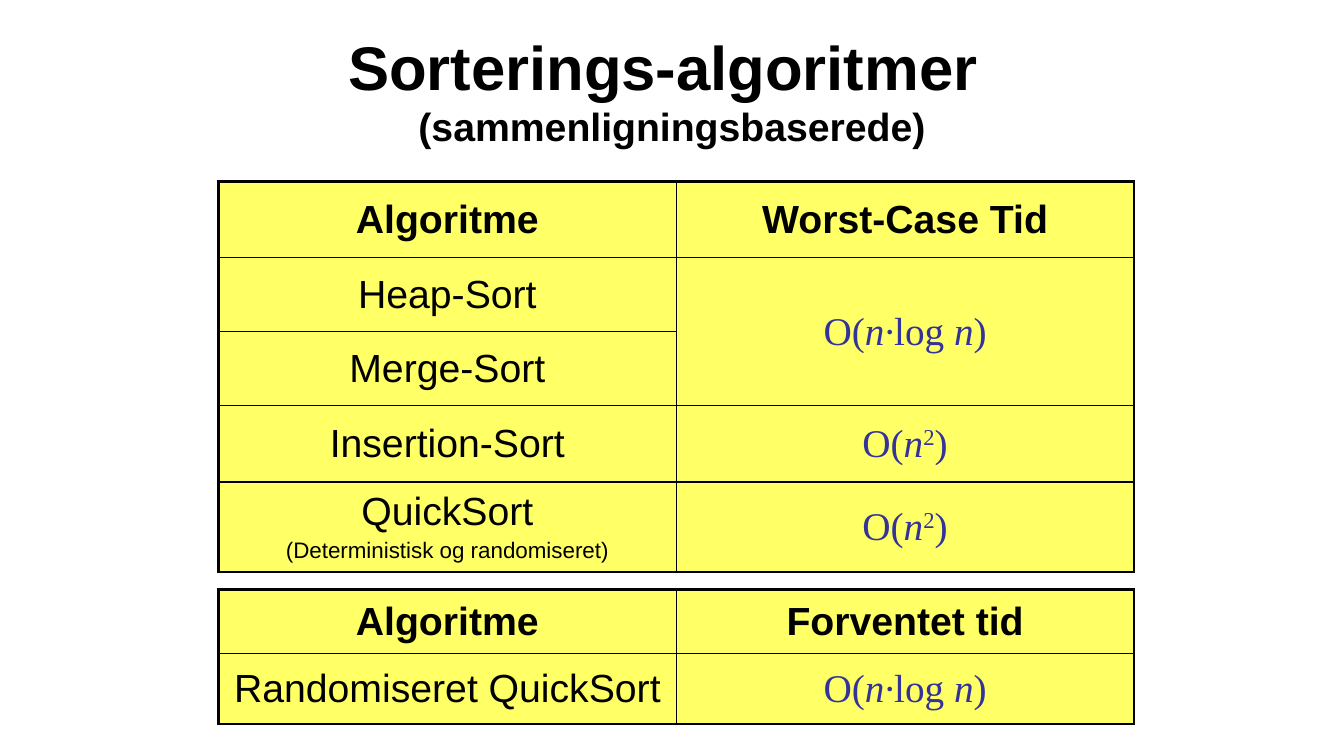
from lxml.etree import SubElement
from pptx import Presentation
from pptx.dml.color import RGBColor
from pptx.enum.text import MSO_ANCHOR as Anchor, PP_ALIGN as Align
from pptx.oxml.ns import qn
from pptx.util import Inches, Pt

BLACK = RGBColor(0x00, 0x00, 0x00)
YELLOW = RGBColor(0xFF, 0xFF, 0x66)
INDIGO = RGBColor(0x33, 0x33, 0x99)

# Grid of the slide: 160 columns by 90 rows
GRID_COLUMNS, GRID_ROWS = 160, 90

# Text formats
BODY = {"name": "Arial", "size": Pt(28), "bold": False, "color": BLACK}
HEAD = {**BODY, "bold": True}
TITLE = {**HEAD, "size": Pt(44)}
NOTE = {**BODY, "size": Pt(16)}
MATH = {**BODY, "name": "Times New Roman", "color": INDIGO}
VARIABLE = {**MATH, "italic": True}
POWER = {**MATH, "baseline": "30000"}

# Running times, each a line of (text, format) spans
LINEARITHMIC = [("O(", MATH), ("n·", VARIABLE), ("log ", MATH), ("n", VARIABLE), (")", MATH)]
QUADRATIC = [("O(", MATH), ("n", VARIABLE), ("2", POWER), (")", MATH)]


class SlideWriter:
    """Holds the deck, the current page and the table style."""

    outer_line, inner_line = Pt(2.25), Pt(1)

    def __init__(self):
        self.deck = Presentation()
        self.deck.slide_width, self.deck.slide_height = Inches(13.33), Inches(7.5)
        self.page = self.deck.slides.add_slide(self.deck.slide_layouts[6])

    def across(self, columns):
        return round(self.deck.slide_width * columns / GRID_COLUMNS)

    def down(self, rows):
        return round(self.deck.slide_height * rows / GRID_ROWS)

    def add_span(self, para, text, formats):
        span = para.add_run()
        span.text = text
        for key, value in formats.items():
            if key == "color":
                span.font.color.rgb = value
            elif key == "baseline":
                span._r.get_or_add_rPr().set(key, value)
            else:
                setattr(span.font, key, value)

    def add_heading(self, left, top, width, height, title, subtitle):
        box = self.page.shapes.add_textbox(
            self.across(left), self.down(top), self.across(width), self.down(height))
        frame = box.text_frame
        frame.word_wrap, frame.vertical_anchor = True, Anchor.MIDDLE
        para = frame.paragraphs[0]
        para.alignment = Align.CENTER
        self.add_span(para, title, TITLE)
        para.add_line_break()
        self.add_span(para, subtitle, HEAD)

    def fill_cell(self, cell, lines):
        cell.vertical_anchor = Anchor.MIDDLE
        for index, spans in enumerate(lines):
            frame = cell.text_frame
            para = frame.add_paragraph() if index else frame.paragraphs[0]
            para.alignment = Align.CENTER
            if index:
                para.space_before = Pt(3.2)
            for text, formats in spans:
                self.add_span(para, text, formats)

    def style_cell(self, cell, outer_sides):
        cell.fill.solid()
        cell.fill.fore_color.rgb = YELLOW
        properties = cell._tc.get_or_add_tcPr()
        for index, side in enumerate("LRTB"):
            width = self.outer_line if outer_sides[side] else self.inner_line
            line = SubElement(properties, qn("a:ln" + side), w=str(int(width)))
            fill = SubElement(line, qn("a:solidFill"))
            SubElement(fill, qn("a:srgbClr"), val=str(BLACK))
            properties.insert(index, line)

    def add_table(self, left, top, column_width, heights, rows):
        """Each row is a list of cells; None joins a cell to the one above."""
        count = len(rows[0])
        table = self.page.shapes.add_table(
            len(rows), count, self.across(left), self.down(top),
            self.across(column_width * count), self.down(sum(heights))).table
        table.first_row = table.horz_banding = False
        for column in table.columns:
            column.width = self.across(column_width)
        for r, (height, row) in enumerate(zip(heights, rows)):
            table.rows[r].height = self.down(height)
            for c, lines in enumerate(row):
                cell = table.cell(r, c)
                self.style_cell(cell, {"L": c == 0, "R": c == count - 1,
                                       "T": r == 0, "B": r == len(rows) - 1})
                if lines is None:
                    table.cell(r - 1, c).merge(cell)
                else:
                    self.fill_cell(cell, lines)


def plain(text, formats=BODY):
    return [(text, formats)]


def main():
    writer = SlideWriter()

    # Heading
    writer.add_heading(20, 0.6, 120, 20, "Sorterings-algoritmer ", "(sammenligningsbaserede)")

    # Worst-case times
    writer.add_table(26, 21.6, 54.5, [9.1, 8.8, 8.8, 9.1, 10.7], [
        [[plain("Algoritme", HEAD)], [plain("Worst-Case Tid", HEAD)]],
        [[plain("Heap-Sort")], [LINEARITHMIC]],
        [[plain("Merge-Sort")], None],
        [[plain("Insertion-Sort")], [QUADRATIC]],
        [[plain("QuickSort"), plain("(Deterministisk og randomiseret)", NOTE)], [QUADRATIC]],
    ])

    # Expected times
    writer.add_table(26, 70.2, 54.5, [7.6, 8.4], [
        [[plain("Algoritme", HEAD)], [plain("Forventet tid", HEAD)]],
        [[plain("Randomiseret QuickSort")], [LINEARITHMIC]],
    ])

    writer.deck.save("out.pptx")


if __name__ == "__main__":
    main()
